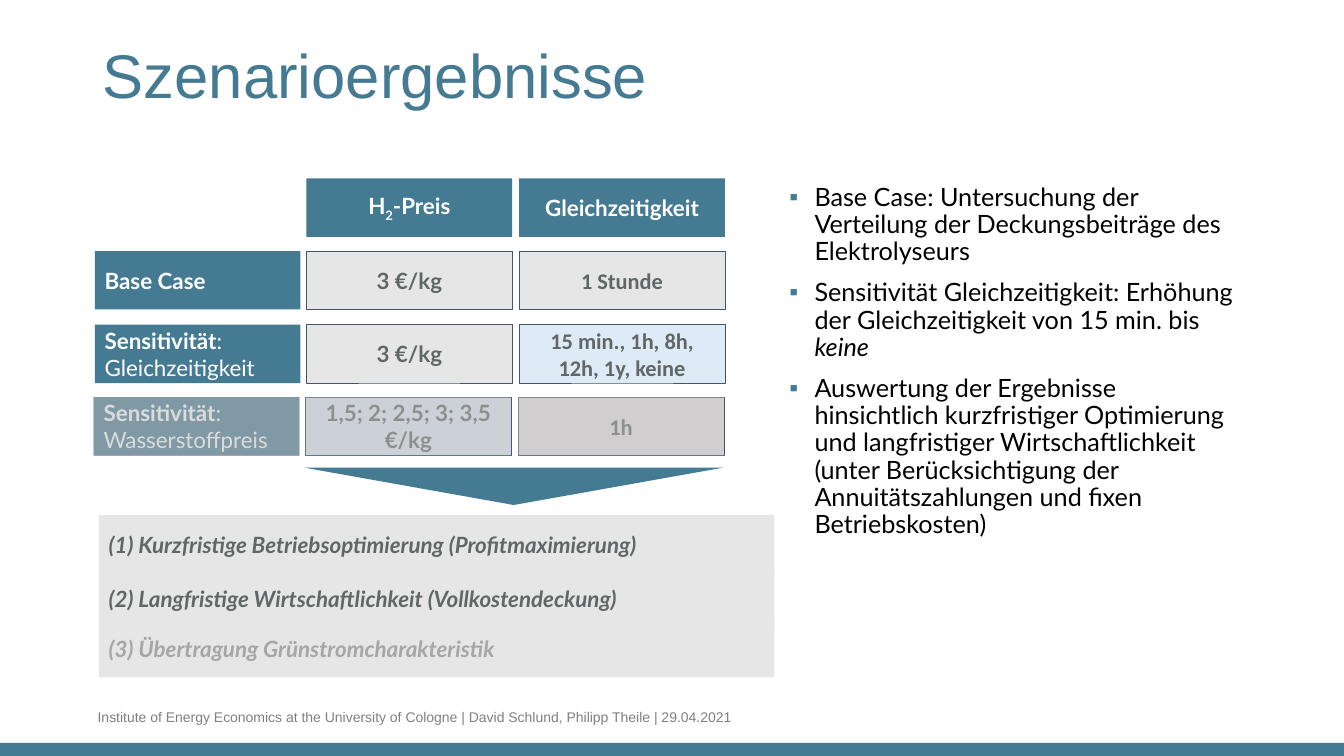
from lxml import etree
from pptx import Presentation
from pptx.dml.color import RGBColor
from pptx.enum.shapes import MSO_SHAPE as Preset
from pptx.enum.text import MSO_ANCHOR as Anchor, MSO_AUTO_SIZE as AutoSize, PP_ALIGN as Align
from pptx.oxml.ns import qn
from pptx.util import Inches, Pt

TITLE = "Szenarioergebnisse"
FOOTER = "Institute of Energy Economics at the University of Cologne | David Schlund, Philipp Theile | 29.04.2021"

HEADER, LABEL, FIXED, VARIED = "header", "label", "fixed", "varied"
PLAIN = {"bold": False}
LATO, CALIBRI = {"name": "Lato"}, {"name": "Calibri"}

SCENARIOS = [
    [None,
     (HEADER, [[("H", {}), ("2", {"baseline": -25000}), ("-Preis", {})]]),
     (HEADER, [[("Gleichzeitigkeit", {})]])],
    [(LABEL, [[("Base Case", {})]]),
     (FIXED, [[("3 €/kg", LATO)]]),
     (FIXED, [[("1 Stunde", CALIBRI)]])],
    [(LABEL, [[("Sensitivität", {}), (":", PLAIN)], [("Gleichzeitigkeit", PLAIN)]]),
     (FIXED, [[("3 €/kg", LATO)]]),
     (VARIED, [[("15 min., 1h, 8h, 12h, 1y, keine", CALIBRI)]])],
    [(LABEL, [[("Sensitivität", {}), (":", PLAIN)], [("Wasserstoffpreis", PLAIN)]]),
     (VARIED, [[("1,5; 2; 2,5; 3; 3,5 €/kg", LATO)]]),
     (FIXED, [[("1h", CALIBRI)]])],
]
DIMMED_ROW = 3

STATEMENTS = [
    (5.11, "(1) Kurzfristige Betriebsoptimierung (Profitmaximierung)", "616767"),
    (5.65, "(2) Langfristige Wirtschaftlichkeit (Vollkostendeckung)", "616767"),
    (6.14, "(3) Übertragung Grünstromcharakteristik", "A6A6A6"),
]

BULLETS = [
    [("Base Case: Untersuchung der Verteilung der Deckungsbeiträge des Elektrolyseurs", {})],
    [("Sensitivität Gleichzeitigkeit: Erhöhung der Gleichzeitigkeit von 15 min. bis ", {}),
     ("keine", {"italic": True})],
    [("Auswertung der Ergebnisse hinsichtlich kurzfristiger Optimierung und langfristiger "
      "Wirtschaftlichkeit (unter Berücksichtigung der Annuitätszahlungen und fixen "
      "Betriebskosten)", {})],
]

THEME = {
    "bar": "457A93", "box": "447A92", "panel": "E7E6E6", "veil": "BAB8B8", "outline": "44546A",
    "title": {"name": "Arial", "size": 44, "color": "457A93"},
    "footer": {"name": "Arial", "size": 10, "color": "808080"},
    "bullet": {"name": "Lato", "size": 18, "color": "000000"},
    "statement": {"name": "Lato", "size": 16, "bold": True, "italic": True},
    "heading": {"name": "Lato", "size": 16, "color": "FFFFFF", "bold": True},
    "value": {"size": 16, "color": "616767", "bold": True},
}
CELL_STYLES = {
    HEADER: ("box", None, "heading", Align.CENTER),
    LABEL: ("box", None, "heading", Align.LEFT),
    FIXED: ("panel", "outline", "value", Align.CENTER),
    VARIED: (None, "outline", "value", Align.CENTER),
}
VARIED_FILL = "DEEBF7"

COLUMN_LEFTS = (0.94, 3.04, 5.15)
ROW_TOPS = (1.77, 2.49, 3.22, 3.94)
CELL_WIDTH, CELL_HEIGHT = 2.04, 0.58
DIMMED_SHIFT = 0.01


def write(frame, paragraphs, base, align=Align.LEFT, **paragraph_format):
    for index, runs in enumerate(paragraphs):
        paragraph = frame.paragraphs[0] if index == 0 else frame.add_paragraph()
        paragraph.alignment = align
        for key, value in paragraph_format.items():
            setattr(paragraph, key, value)
        for text, changes in runs:
            run = paragraph.add_run()
            run.text = text
            for key, value in {**base, **changes}.items():
                if key == "color":
                    run.font.color.rgb = RGBColor.from_string(value)
                elif key == "baseline":
                    run._r.get_or_add_rPr().set(key, str(value))
                else:
                    setattr(run.font, key, Pt(value) if key == "size" else value)


def add_block(slide, box, fill, preset=Preset.RECTANGLE, outline=None, alpha=None):
    shape = slide.shapes.add_shape(preset, *map(Inches, box))
    shape.shadow.inherit = False
    shape.fill.solid()
    shape.fill.fore_color.rgb = RGBColor.from_string(fill)
    if alpha:
        color = shape._element.spPr.find(qn("a:solidFill"))[0]
        etree.SubElement(color, qn("a:alpha")).set("val", str(alpha * 1000))
    if outline:
        shape.line.color.rgb = RGBColor.from_string(outline)
        shape.line.width = Pt(0.5)
    else:
        shape.line.fill.background()
    shape.text_frame.word_wrap = True
    shape.text_frame.vertical_anchor = Anchor.MIDDLE
    return shape


def add_text(slide, box):
    frame = slide.shapes.add_textbox(*map(Inches, box)).text_frame
    frame.word_wrap = True
    return frame


def add_bullet(paragraph):
    properties = paragraph._p.get_or_add_pPr()
    properties.set("marL", str(Inches(0.25)))
    properties.set("indent", str(-Inches(0.25)))
    color = etree.SubElement(properties, qn("a:buClr"))
    etree.SubElement(color, qn("a:srgbClr")).set("val", THEME["bar"])
    etree.SubElement(properties, qn("a:buFont")).set("typeface", "Arial")
    etree.SubElement(properties, qn("a:buChar")).set("char", "▪")


def add_title(slide):
    title = slide.shapes.title
    box = {"left": 0.92, "top": 0.4, "width": 11.5, "height": 1.45}
    for key, value in box.items():
        setattr(title, key, Inches(value))
    frame = title.text_frame
    frame.auto_size = AutoSize.NONE
    frame.vertical_anchor = Anchor.TOP
    write(frame, [[(TITLE, {})]], THEME["title"], line_spacing=0.9)


def add_scenarios(slide):
    for row, (top, cells) in enumerate(zip(ROW_TOPS, SCENARIOS)):
        shift = DIMMED_SHIFT if row == DIMMED_ROW else 0
        for left, cell in zip(COLUMN_LEFTS, cells):
            if cell is None:
                continue
            kind, paragraphs = cell
            fill, outline, font, align = CELL_STYLES[kind]
            box = (left - shift, top, CELL_WIDTH, CELL_HEIGHT)
            shape = add_block(slide, box, THEME.get(fill, VARIED_FILL), outline=THEME.get(outline))
            write(shape.text_frame, paragraphs, THEME[font], align)
            if row == DIMMED_ROW:
                add_block(slide, box, THEME["veil"], alpha=50)


def main():
    presentation = Presentation()
    presentation.slide_width, presentation.slide_height = Inches(13.33), Inches(7.5)
    slide = presentation.slides.add_slide(presentation.slide_layouts[5])

    add_block(slide, (0, 7.37, 13.33, 0.13), THEME["bar"])
    write(add_text(slide, (0.87, 6.98, 8.56, 0.27)), [[(FOOTER, {})]], THEME["footer"])
    add_title(slide)

    findings = add_text(slide, (7.73, 1.78, 4.69, 4.97))
    write(findings, BULLETS, THEME["bullet"], line_spacing=0.9)
    for index, paragraph in enumerate(findings.paragraphs):
        add_bullet(paragraph)
        paragraph.space_before = Pt(10 if index else 0)

    arrow = add_block(slide, (3.02, 4.64, 4.15, 0.37), THEME["box"], Preset.ISOSCELES_TRIANGLE)
    arrow.rotation = 180
    for top, text, color in STATEMENTS:
        panel = add_block(slide, (0.98, top, 6.7, CELL_HEIGHT), THEME["panel"])
        write(panel.text_frame, [[(text, {"color": color})]], THEME["statement"])
    add_scenarios(slide)

    presentation.save("out.pptx")


if __name__ == "__main__":
    main()
